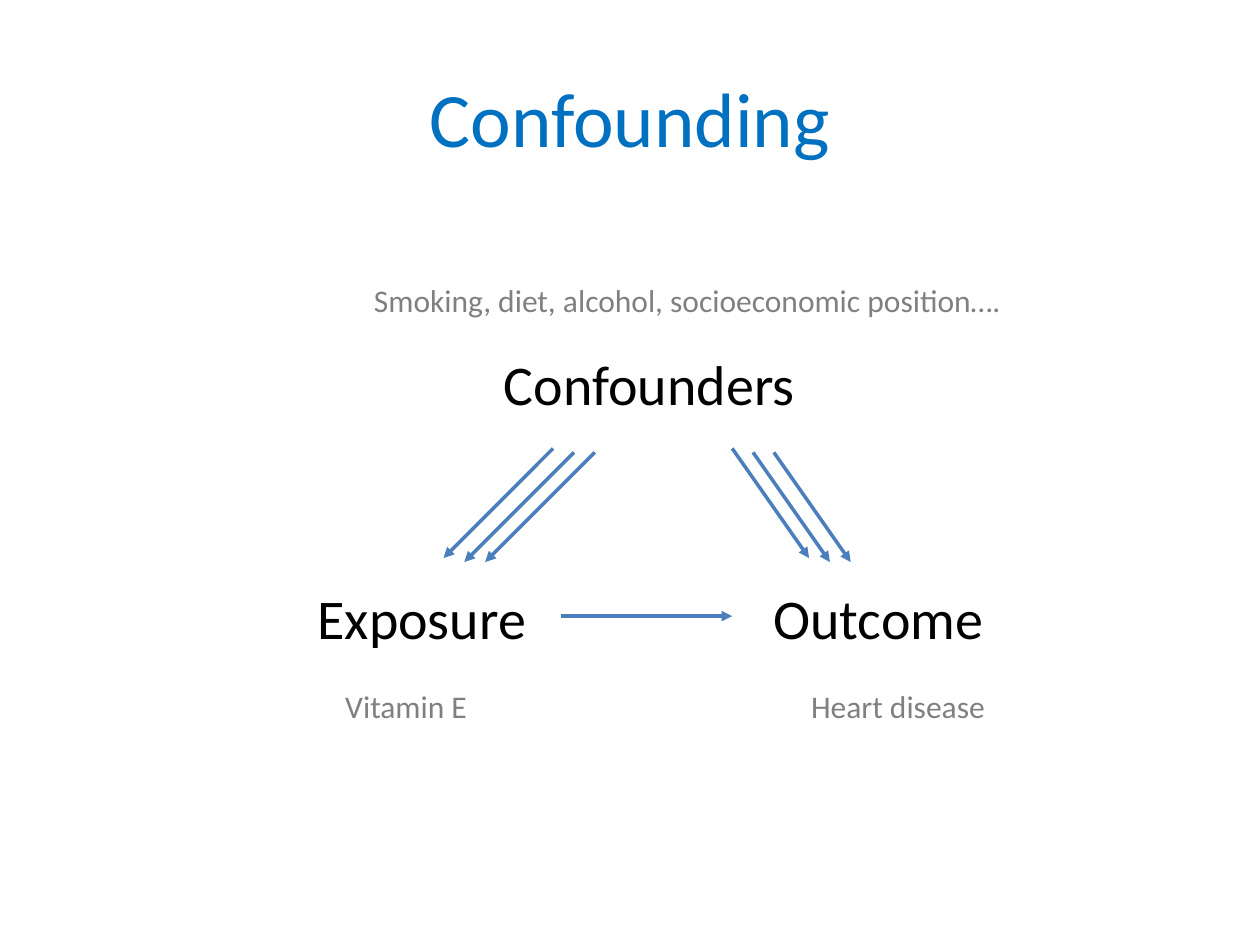
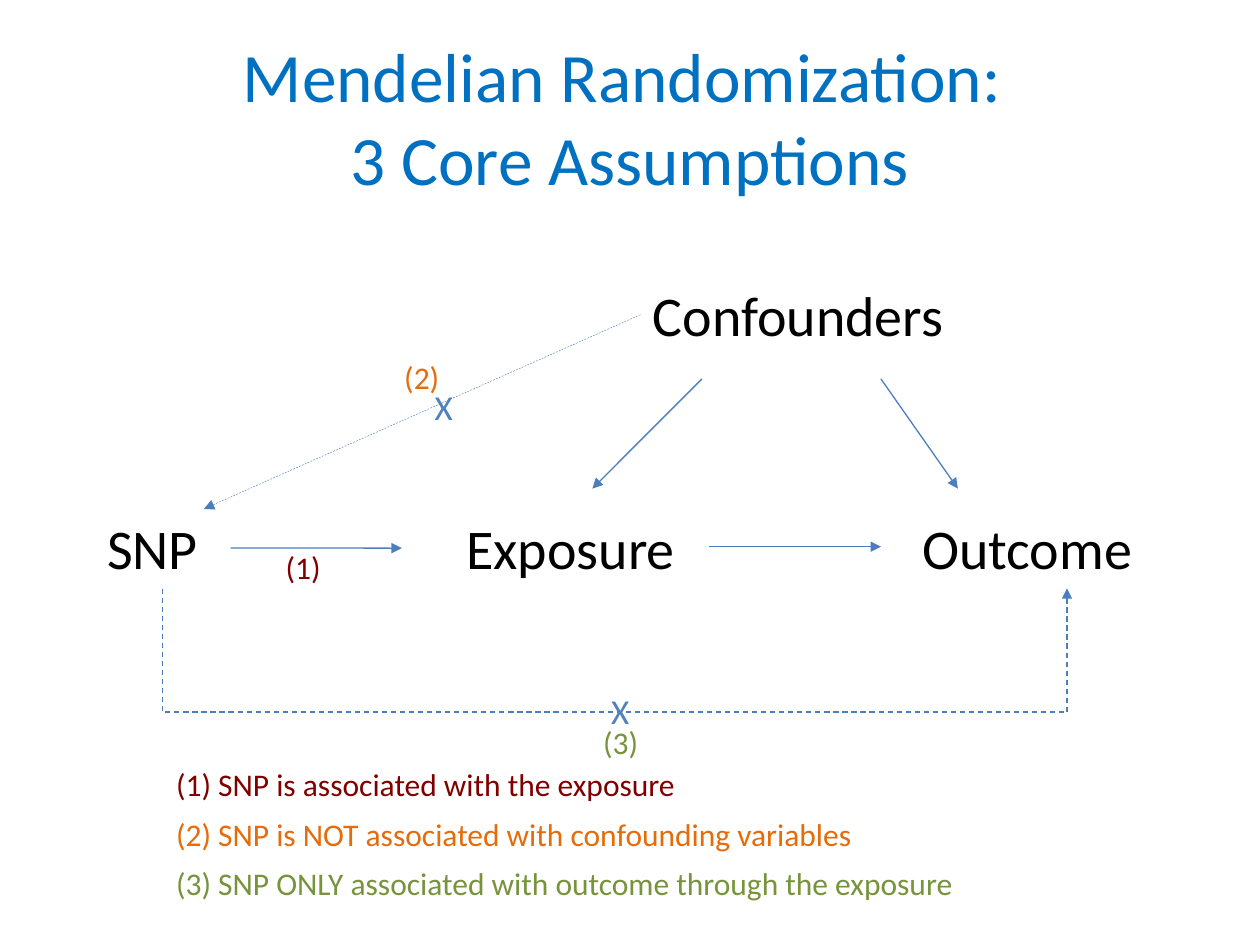
"""Build two slides on confounding and Mendelian randomization."""
from dataclasses import dataclass
from typing import Any, Optional

from lxml import etree
from pptx import Presentation
from pptx import util as u
from pptx.dml import color
from pptx.enum import dml, shapes, text
from pptx.oxml import ns

FONT = "Calibri"
TITLE_BLUE = "0070C0"
LINE_BLUE = "4B7EBC"
CROSS_BLUE = "4F81BD"
BLACK = "000000"
GREY = "808080"
MAROON = "800000"
ORANGE = "E46C0A"
GREEN = "77933C"
NODE_HEIGHT = 1.63
NOTE_HEIGHT = 1.02


@dataclass(frozen=True)
class Label:
    words: str
    left: float
    top: float
    width: float
    height: float = NOTE_HEIGHT
    size: float = 18
    colour: str = GREY
    wrap: bool = False


@dataclass(frozen=True)
class Arrow:
    start: tuple[float, float]
    end: tuple[float, float]
    weight: float = 0.75
    dashed: bool = False
    head: bool = True
    kind: Any = shapes.MSO_CONNECTOR.STRAIGHT


def rgb(value: str) -> color.RGBColor:
    return color.RGBColor.from_string(value)


def apply(target: Any, values: dict[str, Any]) -> None:
    for name, value in values.items():
        setattr(target, name, value)


def format_font(font: Any, size: float, colour: str) -> None:
    apply(font, {"name": FONT, "size": u.Pt(size)})
    font.color.rgb = rgb(colour)


def node(words: str, left: float, top: float, width: float) -> Label:
    return Label(words, left, top, width, NODE_HEIGHT, 32, BLACK, True)


def cross(left: float, top: float) -> Label:
    return Label("X", left, top, 0.79, 1.12, 20, CROSS_BLUE, True)


def add_titled_slide(presentation: Any, words: str, size: float) -> Any:
    slide = presentation.slides.add_slide(presentation.slide_layouts[5])
    title = slide.shapes.title
    apply(title, {"left": u.Cm(1.27), "top": u.Cm(0.76),
                  "width": u.Cm(22.86), "height": u.Cm(3.18)})
    frame = title.text_frame
    apply(frame, {"text": words, "vertical_anchor": text.MSO_ANCHOR.MIDDLE,
                  "auto_size": text.MSO_AUTO_SIZE.NONE})
    paragraph = frame.paragraphs[0]
    paragraph.alignment = text.PP_ALIGN.CENTER
    for run in paragraph.runs:
        format_font(run.font, size, TITLE_BLUE)
    return slide


def add_label(slide: Any, label: Label) -> Any:
    shape = slide.shapes.add_textbox(
        u.Cm(label.left), u.Cm(label.top), u.Cm(label.width), u.Cm(label.height))
    apply(shape.text_frame, {"text": label.words, "word_wrap": label.wrap,
                             "auto_size": text.MSO_AUTO_SIZE.SHAPE_TO_FIT_TEXT})
    format_font(shape.text_frame.paragraphs[0].runs[0].font, label.size, label.colour)
    return shape


def add_arrow(slide: Any, arrow: Arrow, origin: Optional[Any] = None, side: int = 0) -> Any:
    ends = [u.Cm(value) for value in (*arrow.start, *arrow.end)]
    connector = slide.shapes.add_connector(arrow.kind, *ends)
    if origin is not None:
        connector.begin_connect(origin, side)
    connector.line.color.rgb = rgb(LINE_BLUE)
    connector.line.width = u.Pt(arrow.weight)
    if arrow.dashed:
        connector.line.dash_style = dml.MSO_LINE.DASH
    if arrow.head:
        etree.SubElement(connector.get_or_add_ln(), ns.qn("a:tailEnd"), type="triangle")
    etree.SubElement(connector._element.spPr, ns.qn("a:effectLst"))
    return connector


def add_triangle(slide: Any, right: float, down: float, weight: float, copies: int) -> Any:
    add_label(slide, node("Exposure", 6.15 + right, 11.63 + down, 4.95))
    add_label(slide, node("Outcome", 15.34 + right, 11.63 + down, 5.36))
    confounders = add_label(slide, node("Confounders", 9.91 + right, 6.93 + down, 6.96))
    level = 12.42 + down
    add_arrow(slide, Arrow((11.3 + right, level), (14.76 + right, level), weight))
    for index in range(copies):
        across = right + 0.42 * index
        drop = down + (0.08 if index else 0)
        for start, end in ((11.15, 8.94), (14.76, 16.31)):
            add_arrow(slide, Arrow((start + across, 9.04 + drop),
                                   (end + across, 11.25 + drop), weight))
    return confounders


def build_confounding(presentation: Any) -> None:
    slide = add_titled_slide(presentation, "Confounding", 44)
    add_triangle(slide, 0, 0, 2, 3)
    for label in (
        Label("Vitamin E", 6.71, 13.72, 3),
        Label("Smoking, diet, alcohol, socioeconomic position….", 7.29, 5.54, 13.41, wrap=True),
        Label("Heart disease", 16.1, 13.72, 4.06),
    ):
        add_label(slide, label)


def build_assumptions(presentation: Any) -> None:
    slide = add_titled_slide(
        presentation, "Mendelian Randomization: \v3 Core Assumptions", 39.6)
    confounders = add_triangle(slide, 3, -1.4, 0.75, 1)
    snp = add_label(slide, node("SNP", 1.91, 10.23, 2.74))
    add_arrow(slide, Arrow((4.65, 11.05), (8.1, 11.05)), snp, 3)
    add_arrow(slide, Arrow((12.9, 6.45), (4.11, 10.26), 0.25, True), confounders, 1)

    elbow = add_arrow(slide, Arrow((13.64, 3.99), (11.15, 22.23), dashed=True, head=False,
                                   kind=shapes.MSO_CONNECTOR.ELBOW))
    properties = elbow._element.spPr
    properties.find(ns.qn("a:xfrm")).set("rot", str(270 * 60000))
    properties.find(ns.qn("a:prstGeom")).set("prst", "bentConnector2")
    add_arrow(slide, Arrow((21.51, 14.35), (21.51, 11.86), dashed=True))

    assumptions = (
        ("SNP is associated with the exposure", 10.69, MAROON, 5.51, 10.92),
        ("SNP is NOT associated with confounding variables", 14.33, ORANGE, 7.9, 7.09),
        ("SNP ONLY associated with outcome through the exposure", 16.43, GREEN, 11.91, 14.45),
    )
    for index, (words, width, colour, left, top) in enumerate(assumptions):
        number = f"({index + 1})"
        add_label(slide, Label(f"{number} {words}", 3.3, 15.3 + index, width, colour=colour))
        add_label(slide, Label(number, left, top, 1.22, colour=colour))
    for label in (cross(8.51, 7.65), cross(12.07, 13.77)):
        add_label(slide, label)


def main() -> None:
    presentation = Presentation()
    apply(presentation, {"slide_width": u.Cm(25.4), "slide_height": u.Cm(19.05)})
    build_confounding(presentation)
    build_assumptions(presentation)
    presentation.save("out.pptx")


if __name__ == "__main__":
    main()
